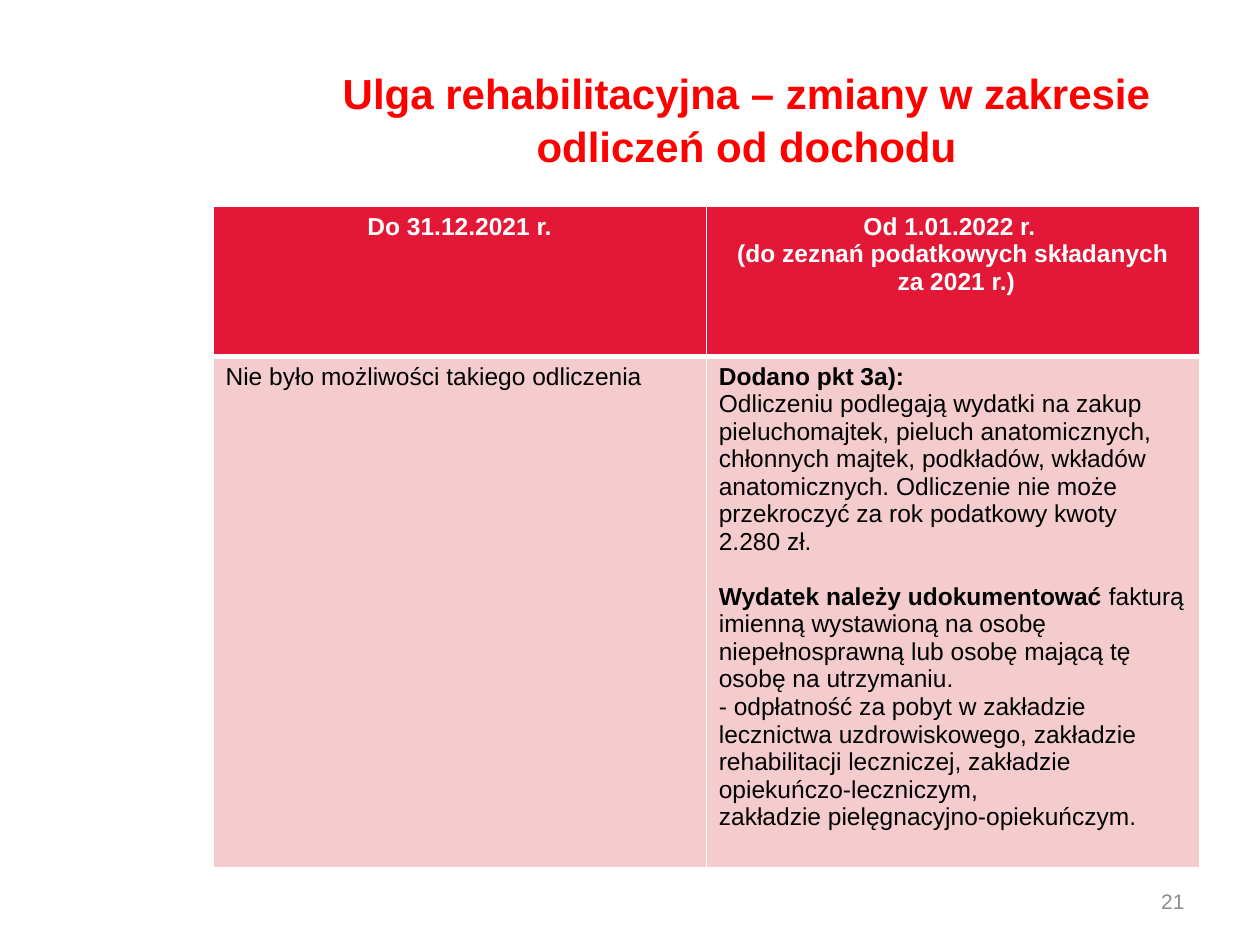
from lxml import etree
from pptx import Presentation
from pptx import util as u
from pptx.dml.color import RGBColor
from pptx.enum import text
from pptx.oxml import ns

RED = RGBColor(0xFF, 0x00, 0x00)
CRIMSON = RGBColor(0xE3, 0x18, 0x37)
PINK = RGBColor(0xF4, 0xCC, 0xCE)
WHITE = RGBColor(0xFF, 0xFF, 0xFF)
BLACK = RGBColor(0x00, 0x00, 0x00)
GRAY = RGBColor(0x8C, 0x8C, 0x8C)

LEFT, CENTER, RIGHT = (text.PP_ALIGN.LEFT, text.PP_ALIGN.CENTER,
                       text.PP_ALIGN.RIGHT)


class SlideBuilder:
    font_name = "Arial"

    def __init__(self, slide):
        self.slide = slide

    def fill_text(self, frame, paragraphs, size, color, align):
        """Each paragraph is a list of (words, bold) runs."""
        frame.word_wrap = True
        for index, runs in enumerate(paragraphs):
            paragraph = frame.paragraphs[0] if index == 0 else frame.add_paragraph()
            paragraph.alignment = align
            for words, bold in runs:
                run = paragraph.add_run()
                run.text = words
                run.font.name = self.font_name
                run.font.size = u.Pt(size)
                run.font.bold = bold
                run.font.color.rgb = color

    def text_box(self, place, words, size, color, align, bold=False):
        shape = self.slide.shapes.add_textbox(*map(u.Inches, place))
        frame = shape.text_frame
        frame.vertical_anchor = text.MSO_ANCHOR.MIDDLE
        self.fill_text(frame, [[(words, bold)]], size, color, align)
        return shape

    def table(self, place, row_heights, columns):
        left, top, width = place
        shape = self.slide.shapes.add_table(
            len(row_heights), columns, u.Inches(left), u.Inches(top),
            u.Inches(width), u.Inches(sum(row_heights)))
        for row, height in zip(shape.table.rows, row_heights):
            row.height = u.Inches(height)
        return shape.table

    def cell(self, cell, paragraphs, fill, color, align, borders):
        self.fill_text(cell.text_frame, paragraphs, 14, color, align)
        properties = cell._tc.get_or_add_tcPr()
        for side, width in borders.items():
            line = etree.SubElement(properties, ns.qn(f"a:ln{side}"),
                                    w=str(u.Pt(width)))
            solid = etree.SubElement(line, ns.qn("a:solidFill"))
            etree.SubElement(solid, ns.qn("a:srgbClr"), val=str(WHITE))
        cell.fill.solid()
        cell.fill.fore_color.rgb = fill


HEADERS = [
    [[("Do 31.12.2021 r.", True)]],
    [[("Od 1.01.2022 r. ", True)],
     [("(do zeznań podatkowych składanych", True)],
     [(" za 2021 r.)", True)]],
]
BODIES = [
    [[("Nie było możliwości takiego odliczenia", False)]],
    [[("Dodano pkt 3a):", True)],
     [("Odliczeniu podlegają wydatki na zakup pieluchomajtek, pieluch "
       "anatomicznych, chłonnych majtek, podkładów, wkładów anatomicznych. "
       "Odliczenie nie może przekroczyć za rok podatkowy kwoty", False)],
     [("2.280 zł.", False)],
     [("Wydatek należy udokumentować ", True),
      ("fakturą imienną wystawioną na osobę niepełnosprawną lub osobę "
       "mającą tę osobę na utrzymaniu.", False)],
     [("- odpłatność za pobyt w zakładzie lecznictwa uzdrowiskowego, "
       "zakładzie rehabilitacji leczniczej, zakładzie "
       "opiekuńczo-leczniczym,", False)],
     [("zakładzie pielęgnacyjno-opiekuńczym.", False)]],
]
DOCUMENTS_PARAGRAPH = 3


def main():
    presentation = Presentation()
    presentation.slide_width = u.Inches(10)
    presentation.slide_height = u.Inches(7.5)
    builder = SlideBuilder(
        presentation.slides.add_slide(presentation.slide_layouts[6]))

    # Title
    title = builder.text_box(
        (2.53, 0.31, 6.79, 1.25),
        "Ulga rehabilitacyjna – zmiany w zakresie odliczeń od dochodu",
        24, RED, CENTER, bold=True)
    title.text_frame.paragraphs[0].line_spacing = 1.05

    # Comparison table
    table = builder.table((1.69, 1.64, 7.83), (1.19, 4.02), 2)
    header_borders = {"L": 1, "R": 1, "T": 1, "B": 3}
    body_borders = {"L": 1, "R": 1, "T": 3, "B": 1}
    for column, (header, body) in enumerate(zip(HEADERS, BODIES)):
        builder.cell(table.cell(0, column), header, CRIMSON, WHITE, CENTER,
                     header_borders)
        builder.cell(table.cell(1, column), body, PINK, BLACK, LEFT,
                     body_borders)
    details = table.cell(1, 1).text_frame.paragraphs
    details[DOCUMENTS_PARAGRAPH].space_before = u.Pt(15.7)

    # Slide number
    builder.text_box((7.17, 6.95, 2.33, 0.4), "21", 12, GRAY, RIGHT)

    presentation.save("out.pptx")


if __name__ == "__main__":
    main()
